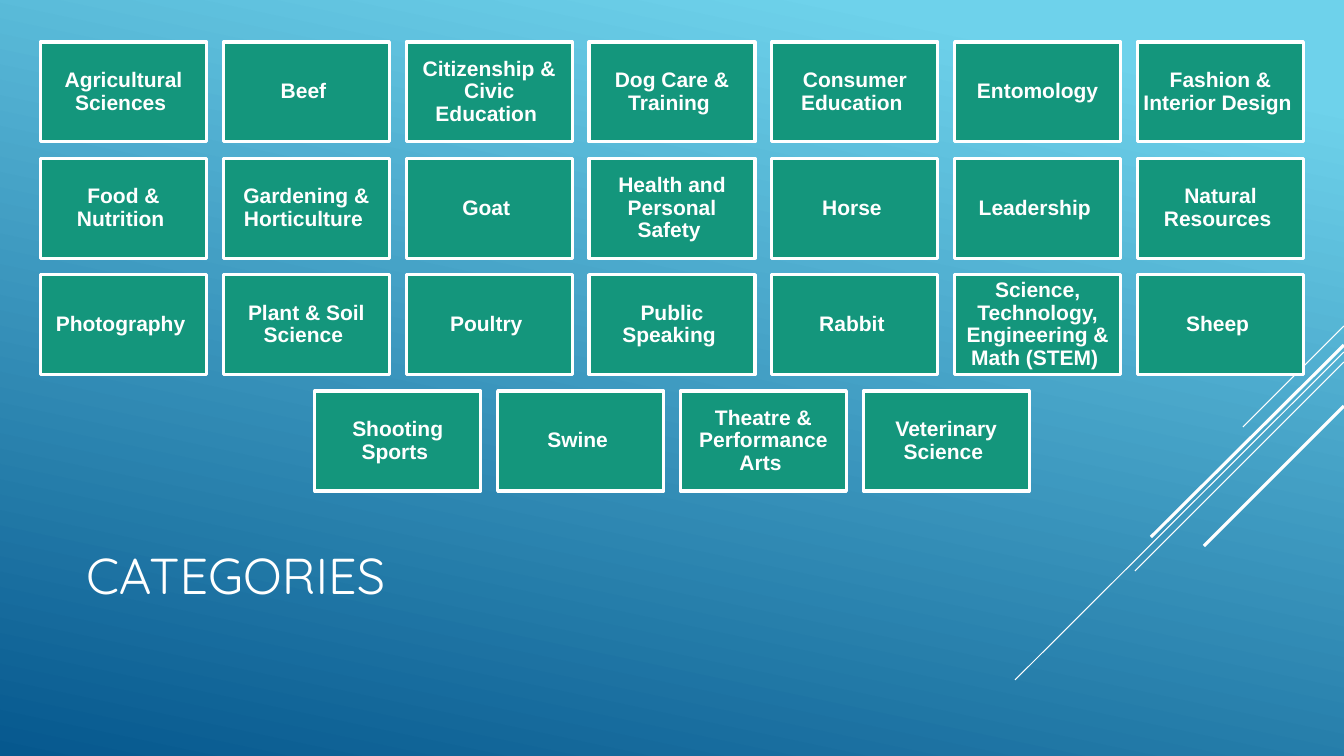
from lxml import etree
from pptx import Presentation
from pptx.dml.color import RGBColor
from pptx.enum.shapes import MSO_CONNECTOR, MSO_SHAPE
from pptx.enum.text import MSO_ANCHOR, PP_ALIGN
from pptx.oxml.ns import qn
from pptx.util import Pt

STRAIGHT = MSO_CONNECTOR.STRAIGHT
RECTANGLE = MSO_SHAPE.RECTANGLE
MIDDLE = MSO_ANCHOR.MIDDLE
LEFT, CENTER = PP_ALIGN.LEFT, PP_ALIGN.CENTER

WHITE = RGBColor(0xFF, 0xFF, 0xFF)
GREEN = RGBColor(0x14, 0x96, 0x7C)
SKY = RGBColor(0x6E, 0xD2, 0xEB)
DEEP_BLUE = RGBColor(0x06, 0x58, 0x8E)

# Lengths in px, 100.8 to the inch
EMU_PER_PX = 914400 / 100.8
SLIDE_W, SLIDE_H = 1344, 756
TILE_W, TILE_H = 166, 100
GRID_TOP = 42
COLUMN_PITCH = 1097 / 6
ROW_PITCH = 349 / 3
TILE_INSET = 6

# A trailing space is part of most category names
CATEGORY_ROWS = [
    ["Agricultural Sciences ", "Beef ", "Citizenship & Civic Education ",
     "Dog Care & Training ", "Consumer Education ", "Entomology",
     "Fashion & Interior Design "],
    ["Food & Nutrition ", "Gardening & Horticulture ", "Goat ",
     "Health and Personal Safety ", "Horse ", "Leadership ",
     "Natural Resources "],
    ["Photography ", "Plant & Soil Science ", "Poultry ", "Public Speaking ",
     "Rabbit ", "Science, Technology, Engineering & Math (STEM) ", "Sheep "],
    ["Shooting Sports ", "Swine ", "Theatre & Performance Arts ",
     "Veterinary Science "],
]

# Start y on the right slide edge, end x, end y, weight in points
DIAGONALS = [
    (326, 1243, 427, 0.75),
    (352, 1015, 680, 0.75),
    (362, 1135, 571, 0.75),
    (345, 1151, 537, 2.25),
    (406, 1204, 546, 2.25),
]


def px(length):
    return round(length * EMU_PER_PX)


def paint_background(slide):
    fill = slide.background.fill
    fill.gradient()
    fill.gradient_angle = 258
    for stop, position, color in zip(fill.gradient_stops, (0.1, 1), (SKY, DEEP_BLUE)):
        stop.position = position
        stop.color.rgb = color


def format_text(frame, font_name, size, bold, alignment):
    frame.word_wrap = True
    frame.vertical_anchor = MIDDLE
    paragraph = frame.paragraphs[0]
    paragraph.alignment = alignment
    paragraph.line_spacing = 0.9
    font = paragraph.runs[0].font
    font.name, font.size, font.bold = font_name, Pt(size), bold
    font.color.rgb = WHITE


def add_diagonal(slide, start_y, end_x, end_y, weight):
    diagonal = slide.shapes.add_connector(
        STRAIGHT, px(SLIDE_W), px(start_y), px(end_x), px(end_y))
    diagonal.line.color.rgb = WHITE
    diagonal.line.width = Pt(weight)
    properties = diagonal._element.find(qn("p:spPr"))
    etree.SubElement(properties, qn("a:effectLst"))


def add_title(slide, text):
    title = slide.shapes.title
    title.left, title.top = px(76), px(495)
    title.width, title.height = px(940), px(166)
    title.text_frame.text = text
    format_text(title.text_frame, "Quicksand", 36, False, LEFT)


def add_tile(slide, left, top, category):
    tile = slide.shapes.add_shape(
        RECTANGLE, px(left), px(top), px(TILE_W), px(TILE_H))
    tile.shadow.inherit = False
    tile.fill.solid()
    tile.fill.fore_color.rgb = GREEN
    tile.line.color.rgb = WHITE
    tile.line.width = Pt(2.25)
    frame = tile.text_frame
    frame.margin_left = frame.margin_right = px(TILE_INSET)
    frame.margin_top = frame.margin_bottom = px(TILE_INSET)
    frame.text = category
    format_text(frame, "Arial", 15, True, CENTER)


def add_tile_row(slide, top, categories):
    row_width = (len(categories) - 1) * COLUMN_PITCH + TILE_W
    row_left = (SLIDE_W - row_width) / 2
    for column, category in enumerate(categories):
        add_tile(slide, row_left + column * COLUMN_PITCH, top, category)


def main():
    deck = Presentation()
    deck.slide_width, deck.slide_height = px(SLIDE_W), px(SLIDE_H)
    slide = deck.slides.add_slide(deck.slide_layouts[5])

    # Backdrop
    paint_background(slide)
    for diagonal in DIAGONALS:
        add_diagonal(slide, *diagonal)

    # Title and centred rows of categories
    add_title(slide, "CATEGORIES")
    for row, categories in enumerate(CATEGORY_ROWS):
        add_tile_row(slide, GRID_TOP + row * ROW_PITCH, categories)

    deck.save("out.pptx")


if __name__ == "__main__":
    main()
